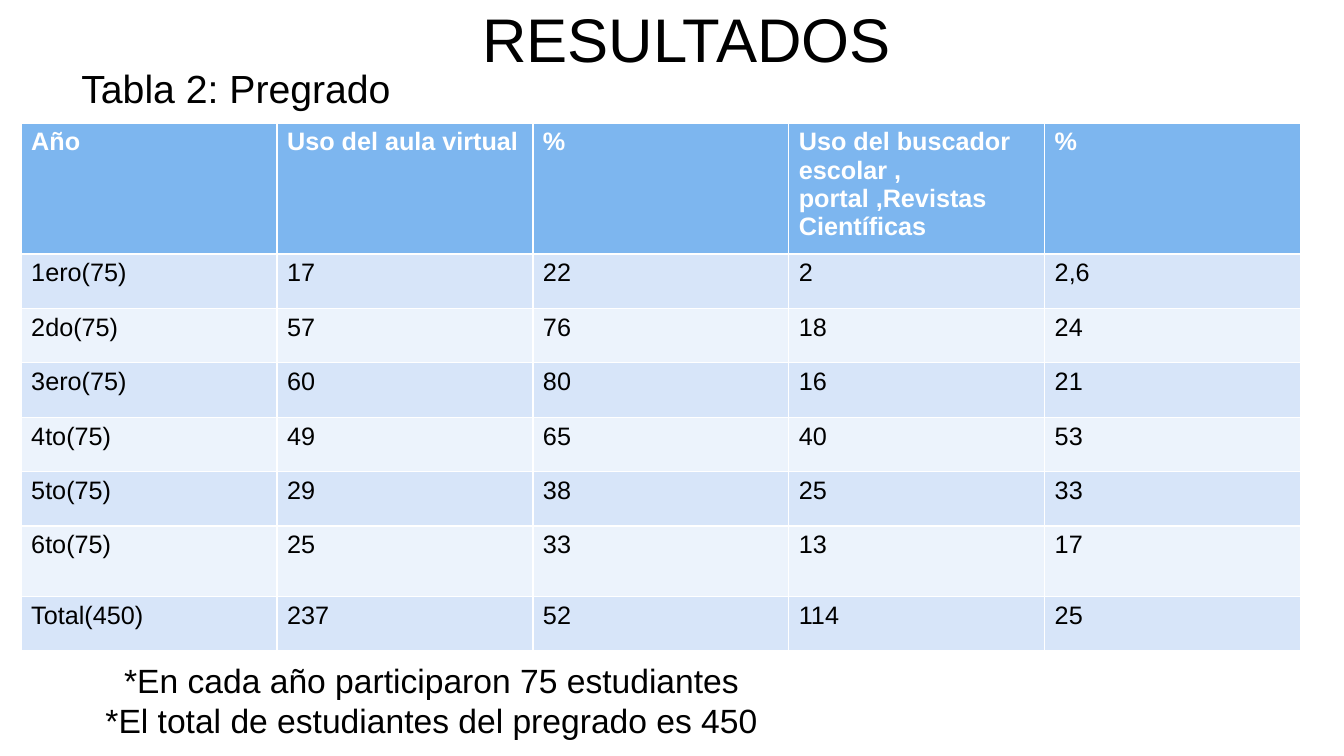
"""Build the slide with the undergraduate results table."""
from pptx import Presentation
from pptx.dml.color import RGBColor
from pptx.enum.text import MSO_ANCHOR as Anchor, MSO_AUTO_SIZE as AutoSize, PP_ALIGN as Align
from pptx.util import Inches, Pt

TITLE = "RESULTADOS"
SUBTITLE = "Tabla 2: Pregrado"
NOTES = [
    "*En cada año participaron 75 estudiantes",
    "*El total de estudiantes del pregrado es 450",
]
HEADER = ["Año", "Uso del aula virtual", "%",
          "Uso del buscador escolar , portal ,Revistas Científicas", "%"]
RESULTS = [
    ("1ero(75)", "17", "22", "2", "2,6"),
    ("2do(75)", "57", "76", "18", "24"),
    ("3ero(75)", "60", "80", "16", "21"),
    ("4to(75)", "49", "65", "40", "53"),
    ("5to(75)", "29", "38", "25", "33"),
    ("6to(75)", "25", "33", "13", "17"),
    ("Total(450)", "237", "52", "114", "25"),
]
COLORS = {"text": "000000", "header_text": "FFFFFF", "header": "7DB6EF",
          "odd": "D7E5F9", "even": "ECF3FC"}
FONT = "Arial"
SLIDE_WIDTH, SLIDE_HEIGHT = 13.33, 7.5
BOX_WIDTH, BOX_HEIGHT = 12, 1.25
TABLE_LEFT, TABLE_TOP, TABLE_WIDTH = 0.21, 1.22, 12.69
HEADER_HEIGHT, ROW_HEIGHT, TALL_ROW_HEIGHT = 1.3, 0.54, 0.7
TALL_ROW = 6


def write(frame, lines, size=18, color="text", bold=False, align=Align.LEFT):
    """Fill a text frame with one formatted paragraph per line."""
    for index, line in enumerate(lines):
        paragraph = frame.add_paragraph() if index else frame.paragraphs[0]
        paragraph.alignment = align
        run = paragraph.add_run()
        run.text = line
        run.font.name = FONT
        run.font.size = Pt(size)
        run.font.bold = bold
        run.font.color.rgb = RGBColor.from_string(COLORS[color])


def place_heading(shape, lines, left, top, size):
    """Position a text shape and write its centred lines."""
    shape.left, shape.top = Inches(left), Inches(top)
    shape.width, shape.height = Inches(BOX_WIDTH), Inches(BOX_HEIGHT)
    frame = shape.text_frame
    frame.word_wrap = True
    frame.auto_size = AutoSize.NONE
    frame.vertical_anchor = Anchor.MIDDLE
    write(frame, lines, size=size, align=Align.CENTER)


def add_results_table(slide):
    """Add the table with a header row and alternating body rows."""
    rows = [HEADER, *RESULTS]
    heights = [HEADER_HEIGHT] + [ROW_HEIGHT] * len(RESULTS)
    heights[TALL_ROW] = TALL_ROW_HEIGHT
    table = slide.shapes.add_table(
        len(rows), len(HEADER), Inches(TABLE_LEFT), Inches(TABLE_TOP),
        Inches(TABLE_WIDTH), Inches(sum(heights))).table
    for column in table.columns:
        column.width = Inches(TABLE_WIDTH / len(HEADER))
    for row_index, (values, height) in enumerate(zip(rows, heights)):
        table.rows[row_index].height = Inches(height)
        is_header = row_index == 0
        fill = "header" if is_header else ("even", "odd")[row_index % 2]
        for column_index, value in enumerate(values):
            cell = table.cell(row_index, column_index)
            cell.fill.solid()
            cell.fill.fore_color.rgb = RGBColor.from_string(COLORS[fill])
            write(cell.text_frame, [value], bold=is_header,
                  color="header_text" if is_header else "text")


def main():
    presentation = Presentation()
    presentation.slide_width = Inches(SLIDE_WIDTH)
    presentation.slide_height = Inches(SLIDE_HEIGHT)
    slide = presentation.slides.add_slide(presentation.slide_layouts.get_by_name("Title Only"))
    place_heading(slide.shapes.title, [TITLE], 0.81, -0.25, 44)
    for lines, left, top, size in [(NOTES, -1.72, 6.32, 24), ([SUBTITLE], -3.66, 0.25, 28)]:
        place_heading(slide.shapes.add_textbox(0, 0, 0, 0), lines, left, top, size)
    add_results_table(slide)
    presentation.save("out.pptx")


if __name__ == "__main__":
    main()
